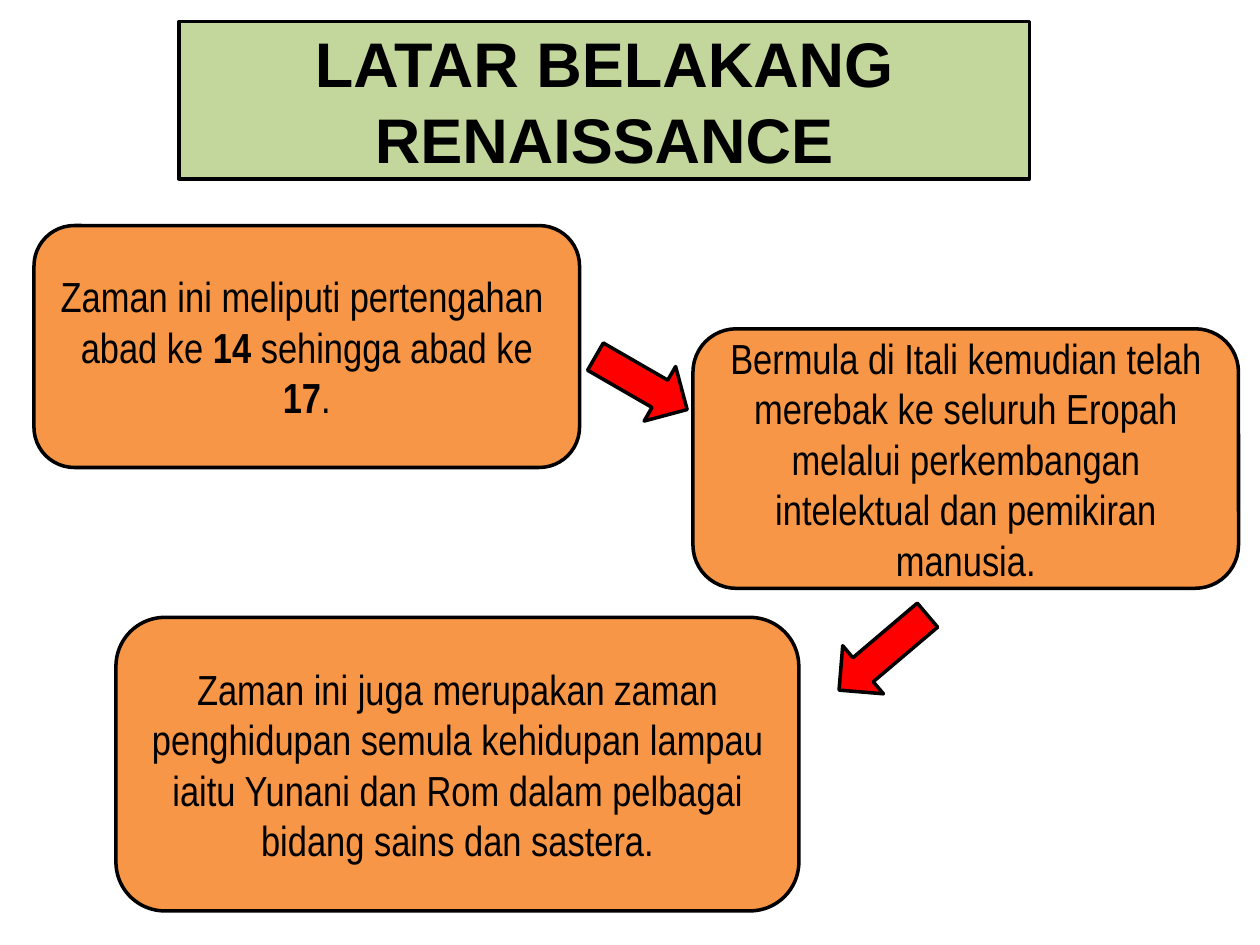
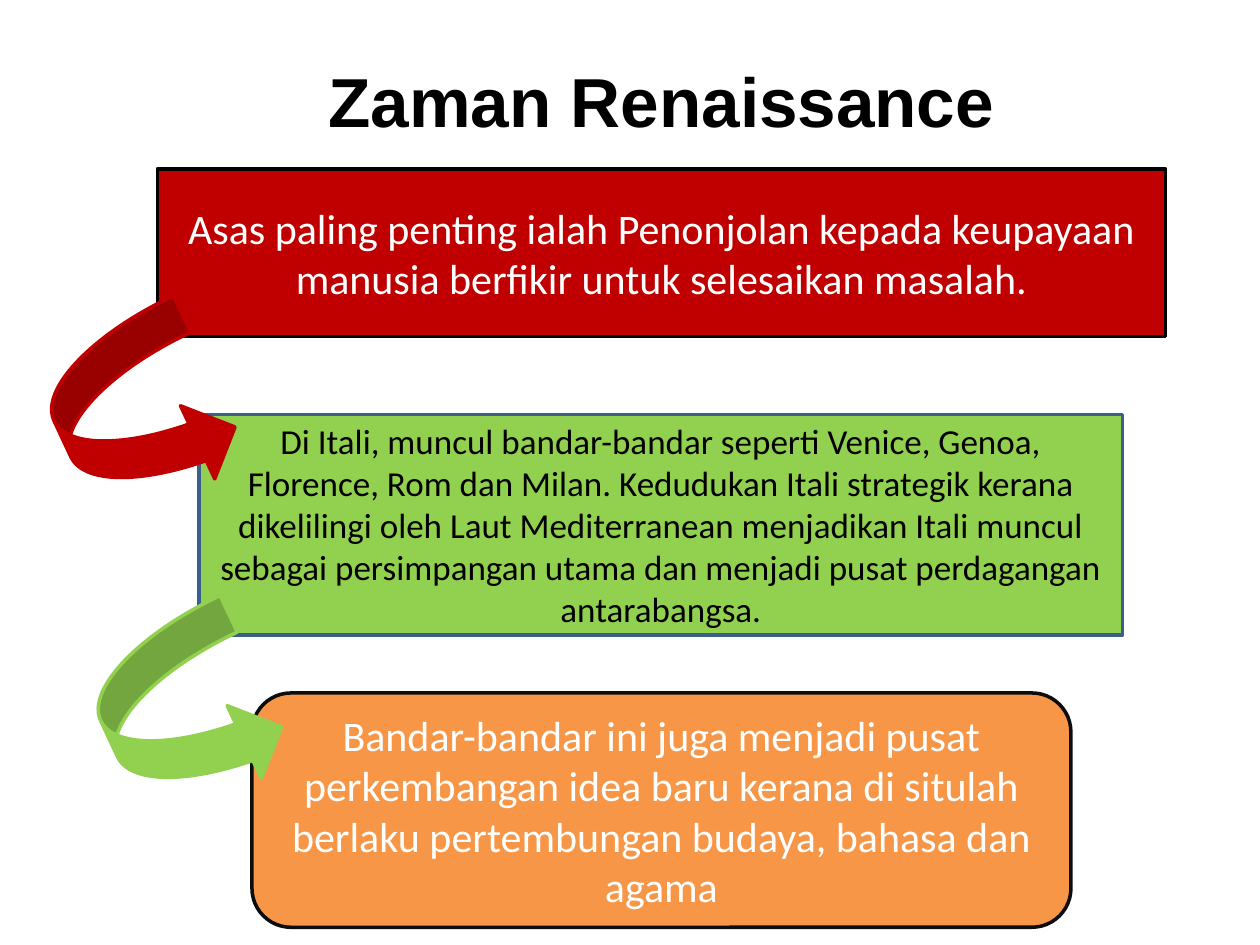
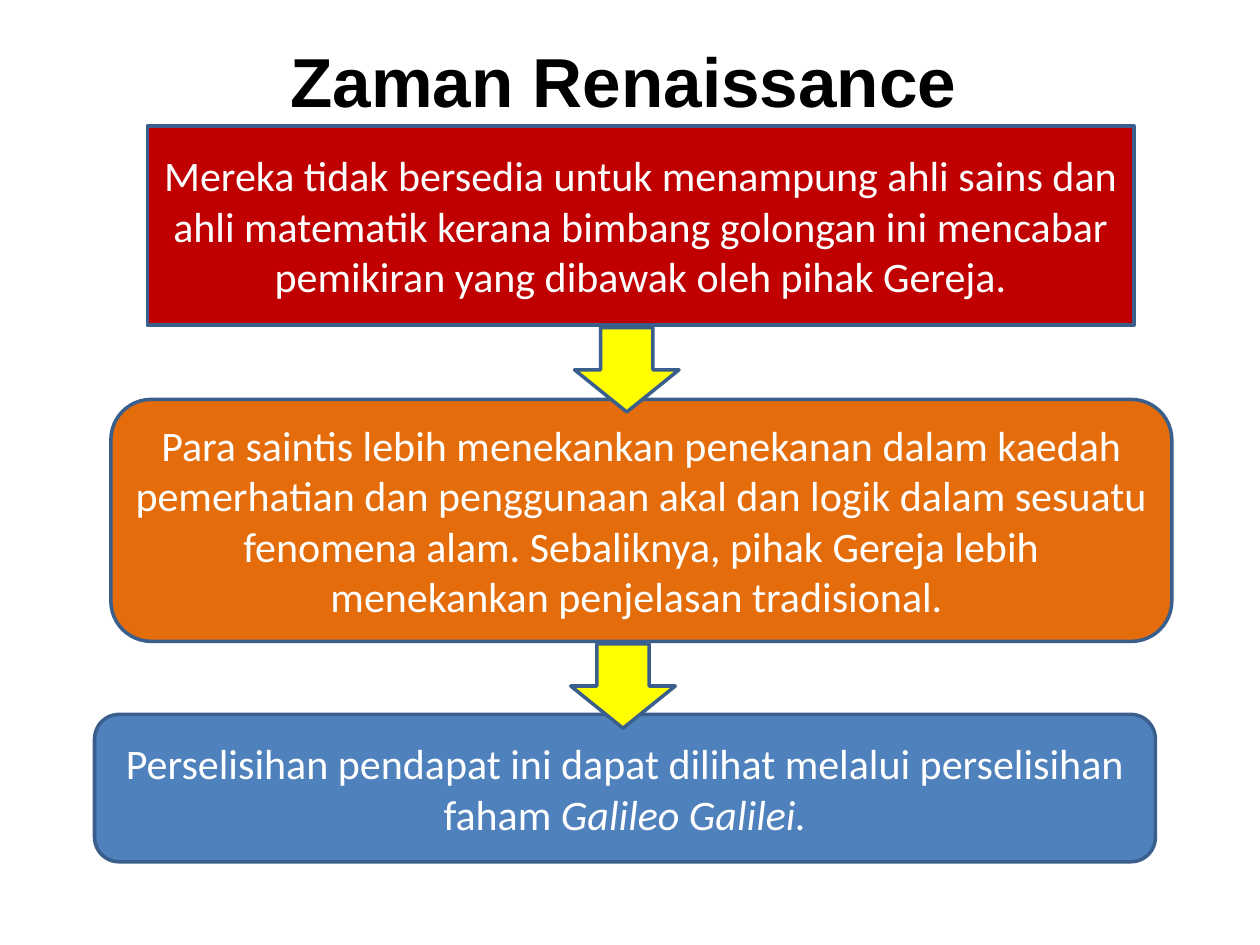
"""Build three slides on the background and ideas of the Renaissance."""
from dataclasses import dataclass

import pptx
import pptx.util
from pptx.dml.color import RGBColor
from pptx.enum.shapes import MSO_SHAPE
from pptx.enum.text import MSO_ANCHOR, PP_ALIGN
from pptx.util import Inches

BLACK = RGBColor(0x00, 0x00, 0x00)
SOFT_BLACK = RGBColor(0x0D, 0x0D, 0x0D)
WHITE = RGBColor(0xFF, 0xFF, 0xFF)
SAGE = RGBColor(0xC3, 0xD6, 0x9B)
ORANGE = RGBColor(0xF7, 0x96, 0x46)
DARK_ORANGE = RGBColor(0xE4, 0x6C, 0x0A)
RED = RGBColor(0xFF, 0x00, 0x00)
CRIMSON = RGBColor(0xC0, 0x00, 0x00)
GREEN = RGBColor(0x92, 0xD0, 0x50)
BLUE = RGBColor(0x4F, 0x81, 0xBD)
NAVY = RGBColor(0x3A, 0x5F, 0x8C)
YELLOW = RGBColor(0xFF, 0xFF, 0x00)

TITLE_FONT = "Arial"
NARROW_FONT = "Arial Narrow"
BODY_FONT = "Calibri"


@dataclass(frozen=True)
class Span:
    """A stretch of text with its own emphasis."""
    text: str
    bold: bool = False
    italic: bool = False


@dataclass(frozen=True)
class Card:
    """A filled panel holding centred text, one tuple of spans a paragraph."""
    left: float
    top: float
    width: float
    height: float
    paragraphs: tuple[tuple[Span, ...], ...]
    fill: RGBColor
    outline: RGBColor = NAVY
    outlined_as: MSO_SHAPE = MSO_SHAPE.ROUNDED_RECTANGLE
    font: str = BODY_FONT
    size: float = 24
    color: RGBColor = WHITE


@dataclass(frozen=True)
class Arrow:
    """A block arrow leading from one card to the next."""
    left: float
    top: float
    width: float
    height: float
    direction: MSO_SHAPE
    fill: RGBColor
    outline: RGBColor
    rotation: float = 0


@dataclass(frozen=True)
class Page:
    """The cards and arrows of one slide, with the place of its title."""
    cards: tuple[Card, ...]
    arrows: tuple[Arrow, ...]
    title_at: tuple[float, float] | None = None


def plain(text: str) -> tuple[tuple[Span, ...], ...]:
    """Wrap a text as a single unemphasised paragraph."""
    return ((Span(text),),)


def write(frame, paragraphs: tuple[tuple[Span, ...], ...], *, font: str,
          size: float, color: RGBColor) -> None:
    """Fill a text frame with centred paragraphs in one format."""
    frame.word_wrap = True
    frame.vertical_anchor = MSO_ANCHOR.MIDDLE
    for index, spans in enumerate(paragraphs):
        paragraph = frame.add_paragraph() if index else frame.paragraphs[0]
        paragraph.alignment = PP_ALIGN.CENTER
        for span in spans:
            run = paragraph.add_run()
            run.text = span.text
            run.font.name = font
            run.font.size = pptx.util.Pt(size)
            run.font.color.rgb = color
            run.font.bold = span.bold
            run.font.italic = span.italic


def draw_block(slide, kind: MSO_SHAPE, block: Card | Arrow):
    """Draw the filled and outlined body of a card or an arrow."""
    body = slide.shapes.add_shape(kind, Inches(block.left), Inches(block.top),
                                  Inches(block.width), Inches(block.height))
    body.shadow.inherit = False
    body.fill.solid()
    body.fill.fore_color.rgb = block.fill
    body.line.color.rgb = block.outline
    body.line.width = pptx.util.Pt(2)
    return body


def draw_card(slide, card: Card) -> None:
    """Draw a card and its text."""
    panel = draw_block(slide, card.outlined_as, card)
    write(panel.text_frame, card.paragraphs, font=card.font, size=card.size,
          color=card.color)


def draw_arrow(slide, arrow: Arrow) -> None:
    """Draw an arrow at its angle."""
    draw_block(slide, arrow.direction, arrow).rotation = arrow.rotation


def draw_title(slide, left: float, top: float) -> None:
    """Draw the title shared by the pages on the Renaissance age."""
    title = slide.shapes.add_textbox(Inches(left), Inches(top), Inches(9), Inches(1.25))
    write(title.text_frame, ((Span("Zaman Renaissance", bold=True),),),
          font=TITLE_FONT, size=39.6, color=BLACK)


def background_card(left: float, top: float, width: float, height: float,
                    paragraphs: tuple[tuple[Span, ...], ...]) -> Card:
    """Describe an orange card of the background page."""
    return Card(left, top, width, height, paragraphs, ORANGE, BLACK,
                font=NARROW_FONT, color=BLACK)


def background_arrow(left: float, top: float, width: float, rotation: float) -> Arrow:
    """Describe a red arrow of the background page."""
    return Arrow(left, top, width, 0.5, MSO_SHAPE.LEFT_ARROW, RED, BLACK, rotation)


def curl(left: float, top: float, color: RGBColor) -> Arrow:
    """Describe a curved arrow in the colour of the card it leaves."""
    return Arrow(left, top, 1.28, 1.47, MSO_SHAPE.CURVED_RIGHT_ARROW, color, color, 334.9)


def drop(left: float, top: float) -> Arrow:
    """Describe a yellow arrow pointing to the card below."""
    return Arrow(left, top, 0.83, 0.67, MSO_SHAPE.DOWN_ARROW, YELLOW, NAVY)


PAGES = (
    Page(
        cards=(
            Card(1.42, 0.17, 6.75, 1.25,
                 ((Span("LATAR BELAKANG RENAISSANCE", bold=True),),),
                 SAGE, BLACK, MSO_SHAPE.RECTANGLE, TITLE_FONT, 36, BLACK),
            background_card(0.27, 1.79, 4.33, 1.92, (
                (Span("Zaman ini meliputi pertengahan "),),
                (Span("abad ke "), Span("14 ", bold=True),
                 Span("sehingga abad ke "), Span("17", bold=True), Span(".")),
            )),
            background_card(5.5, 2.61, 4.33, 2.06, plain(
                "Bermula di Itali kemudian telah merebak ke seluruh Eropah "
                "melalui perkembangan intelektual dan pemikiran manusia.")),
            background_card(0.92, 4.9, 5.42, 2.33, plain(
                "Zaman ini juga merupakan zaman penghidupan semula kehidupan "
                "lampau iaitu Yunani dan Rom dalam pelbagai bidang sains dan "
                "sastera.")),
        ),
        arrows=(background_arrow(4.67, 2.79, 0.84, 210),
                background_arrow(6.55, 4.93, 0.92, 319.7)),
    ),
    Page(
        title_at=(0.75, 0.17),
        cards=(
            Card(1.25, 1.34, 8, 1.33, plain(
                "Asas paling penting ialah Penonjolan kepada keupayaan manusia "
                "berfikir untuk selesaikan masalah."),
                CRIMSON, BLACK, MSO_SHAPE.RECTANGLE),
            Card(1.58, 3.29, 7.33, 1.75, plain(
                "Di Itali, muncul bandar-bandar seperti Venice, Genoa, Florence, "
                "Rom dan Milan. Kedudukan Itali strategik kerana dikelilingi oleh "
                "Laut Mediterranean menjadikan Itali muncul sebagai persimpangan "
                "utama dan menjadi pusat perdagangan antarabangsa."),
                GREEN, outlined_as=MSO_SHAPE.RECTANGLE, size=20, color=BLACK),
            Card(2, 5.5, 6.5, 1.86, plain(
                "Bandar-bandar ini juga menjadi pusat perkembangan idea baru "
                "kerana di situlah berlaku pertembungan budaya, bahasa dan agama"),
                ORANGE, SOFT_BLACK),
        ),
        arrows=(curl(0.47, 2.55, CRIMSON), curl(0.84, 4.93, GREEN)),
    ),
    Page(
        title_at=(0.45, 0.01),
        cards=(
            Card(1.17, 1, 7.83, 1.58, plain(
                "Mereka tidak bersedia untuk menampung ahli sains dan ahli "
                "matematik kerana bimbang golongan ini mencabar pemikiran yang "
                "dibawak oleh pihak Gereja."),
                CRIMSON, outlined_as=MSO_SHAPE.RECTANGLE),
            Card(0.88, 3.17, 8.42, 1.92, plain(
                "Para saintis lebih menekankan penekanan dalam kaedah pemerhatian "
                "dan penggunaan akal dan logik dalam sesuatu fenomena alam. "
                "Sebaliknya, pihak Gereja lebih menekankan penjelasan "
                "tradisional. "), DARK_ORANGE),
            Card(0.75, 5.67, 8.42, 1.17, ((
                Span("Perselisihan pendapat ini dapat dilihat melalui "
                     "perselisihan faham "),
                Span("Galileo Galilei.", italic=True)),), BLUE),
        ),
        arrows=(drop(4.56, 2.6), drop(4.53, 5.11)),
    ),
)


def main() -> None:
    """Draw every page and save the presentation."""
    deck = pptx.Presentation()
    deck.slide_width = Inches(10)
    deck.slide_height = Inches(7.5)
    for page in PAGES:
        slide = deck.slides.add_slide(deck.slide_layouts[6])
        if page.title_at:
            draw_title(slide, *page.title_at)
        for card in page.cards:
            draw_card(slide, card)
        for arrow in page.arrows:
            draw_arrow(slide, arrow)
    deck.save("out.pptx")


if __name__ == "__main__":
    main()
